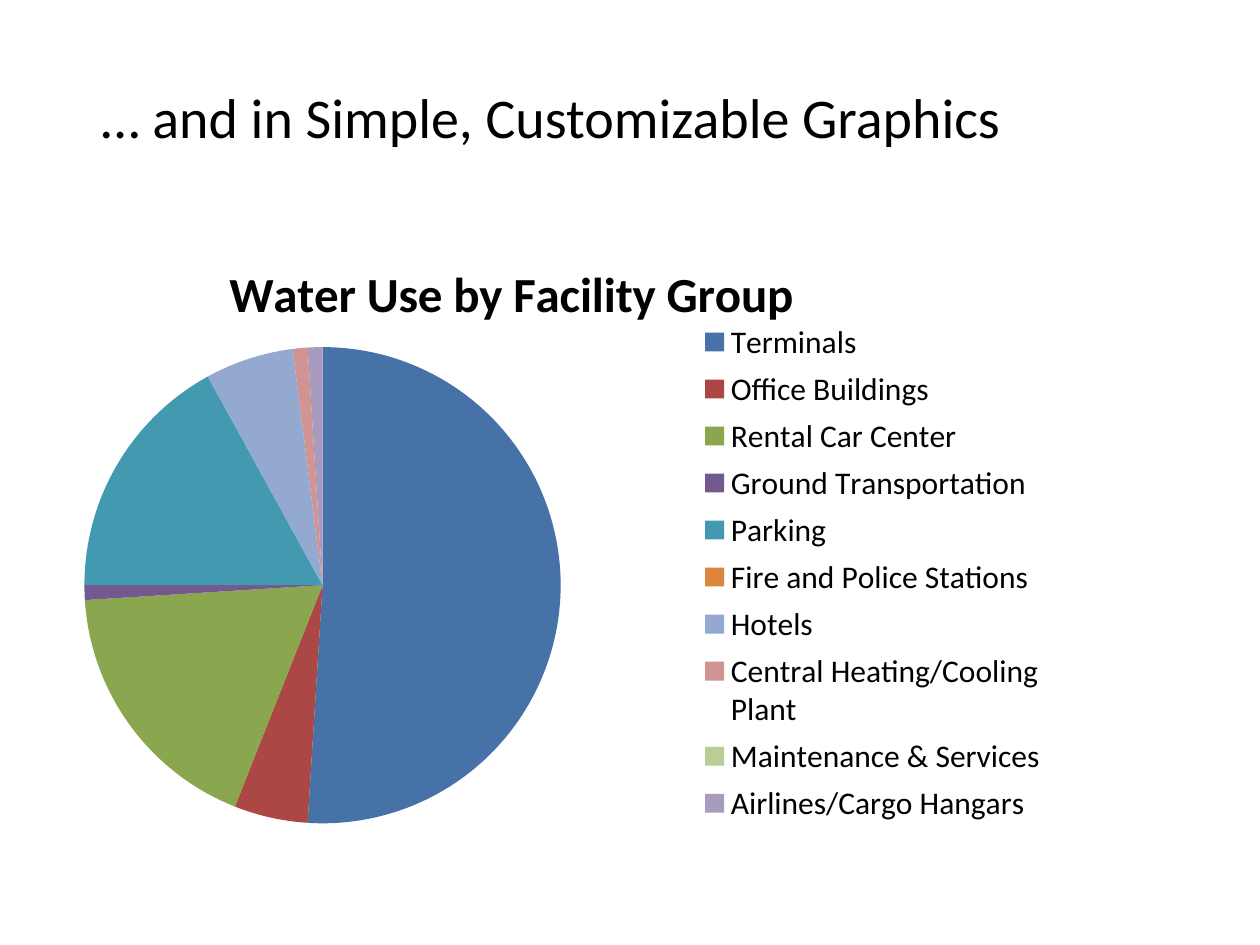
from lxml import etree
from pptx import Presentation
from pptx.chart.data import CategoryChartData
from pptx.dml.color import RGBColor
from pptx.enum import chart as chart_enum, text
from pptx.oxml.ns import qn
from pptx.util import Inches, Pt

# Content
TITLE = "… and in Simple, Customizable Graphics"
CHART_TITLE = "Water Use by Facility Group"
FACILITY_GROUPS = [
    ("Terminals", 51, "4672A8"),
    ("Office Buildings", 5, "AB4744"),
    ("Rental Car Center", 18, "8AA64F"),
    ("Ground Transportation", 1, "725990"),
    ("Parking", 17, "4399B0"),
    ("Fire and Police Stations", 0, "DC853E"),
    ("Hotels", 6, "93A9D0"),
    ("Central Heating/Cooling Plant", 1, "D09493"),
    ("Maintenance & Services", 0, "B9CD96"),
    ("Airlines/Cargo Hangars", 1, "A99BBD"),
]

# Places: slide boxes in inches, chart parts as fractions of the chart
TITLE_BOX = (0.5, 0.3, 7.75, 1.25)
CHART_BOX = (-0.5, 1.75, 9, 4.95)
TITLE_LAYOUT = {"x": 0.25, "y": 0.05}
PIE_LAYOUT = {"x": 0.13, "y": 0.2, "w": 0.42, "h": 0.77}
LEGEND_LAYOUT = {"x": 0.67, "y": 0.15, "w": 0.31, "h": 0.83}


def color(value):
    return RGBColor.from_string(value)


def format_font(font, size, bold=False):
    values = {"name": "Calibri", "size": Pt(size), "bold": bold}
    for name, value in values.items():
        setattr(font, name, value)
    font.color.rgb = color("000000")


def set_layout(element, places, following, inner=False):
    """Place a chart part by fractions, ahead of the named sibling."""
    for old in element.findall(qn("c:layout")):
        element.remove(old)
    layout = etree.Element(qn("c:layout"))
    manual = etree.SubElement(layout, qn("c:manualLayout"))
    settings = [("layoutTarget", "inner")] if inner else []
    settings += [("xMode", "edge"), ("yMode", "edge"), *places.items()]
    for name, value in settings:
        etree.SubElement(manual, qn("c:" + name)).set("val", str(value))
    element.find(qn(following)).addprevious(layout)


presentation = Presentation()
presentation.slide_width, presentation.slide_height = Inches(10), Inches(7.5)
slide = presentation.slides.add_slide(presentation.slide_layouts[5])

# Slide title
title = slide.shapes.title
for name, value in zip(("left", "top", "width", "height"), TITLE_BOX):
    setattr(title, name, Inches(value))
title.text_frame.text = TITLE
title.text_frame.vertical_anchor = text.MSO_ANCHOR.MIDDLE
paragraph = title.text_frame.paragraphs[0]
paragraph.alignment = text.PP_ALIGN.CENTER
format_font(paragraph.runs[0].font, 32)

# Pie chart
names, values, colors = zip(*FACILITY_GROUPS)
data = CategoryChartData()
data.categories = names
data.add_series("Series 1", values)
chart = slide.shapes.add_chart(
    chart_enum.XL_CHART_TYPE.PIE, *map(Inches, CHART_BOX), data).chart
format_font(chart.font, 10)
plot = chart.plots[0]
plot.vary_by_categories = True
for index, value in enumerate(colors):
    fill = plot.series[0].points[index].format.fill
    fill.solid()
    fill.fore_color.rgb = color(value)

# Chart title
chart.has_title = True
title_frame = chart.chart_title.text_frame
title_frame.text = CHART_TITLE
format_font(title_frame.paragraphs[0].runs[0].font, 28, bold=True)

# Legend
chart.has_legend = True
legend = chart.legend
legend.position = chart_enum.XL_LEGEND_POSITION.RIGHT
legend.include_in_layout = False
format_font(legend.font, 18)

# Positions inside the chart
chart_element = chart.element.find(qn("c:chart"))
set_layout(chart_element.find(qn("c:plotArea")), PIE_LAYOUT, "c:pieChart",
           inner=True)
set_layout(chart_element.find(qn("c:title")), TITLE_LAYOUT, "c:overlay")
set_layout(chart_element.find(qn("c:legend")), LEGEND_LAYOUT, "c:overlay")

presentation.save("out.pptx")
